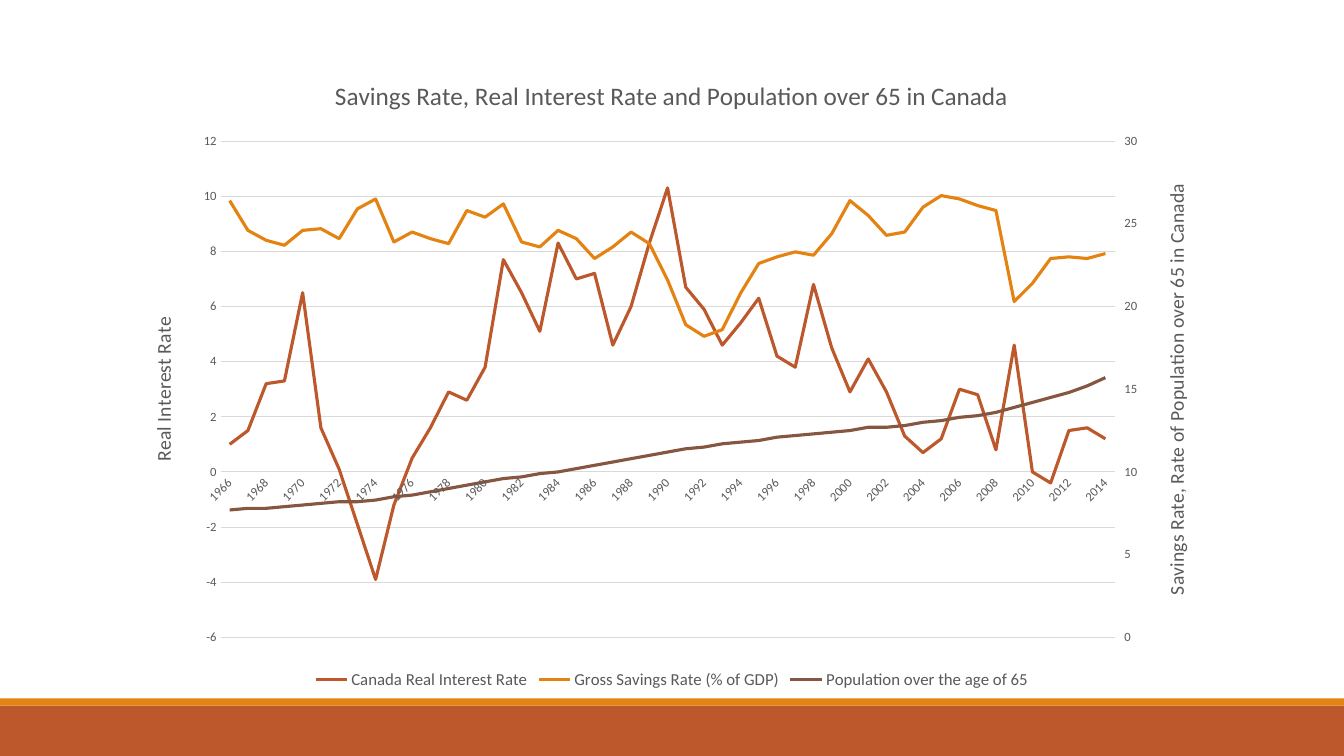
from copy import deepcopy

from lxml import etree
from pptx import Presentation
from pptx.chart import data as cd
from pptx.dml.color import RGBColor
from pptx.enum import chart as ec
from pptx.enum import shapes
from pptx.oxml import ns
from pptx.util import Pt

RUST = RGBColor(0xBD, 0x58, 0x2C)
AMBER = RGBColor(0xE4, 0x83, 0x12)
BROWN = RGBColor(0x86, 0x56, 0x40)
GRAY = RGBColor(0x59, 0x59, 0x59)
PALE = RGBColor(0xD9, 0xD9, 0xD9)
FACE = "Calibri"
AUTO = -1000  # degrees; lets the labels turn only when they are crowded

TITLE = "Savings Rate, Real Interest Rate and Population over 65 in Canada"
LEFT = "Real Interest Rate"
RIGHT = "Savings Rate, Rate of Population over 65 in Canada"
YEARS = range(1966, 2015)
SERIES = [
    ("Canada Real Interest Rate", RUST, [
        1, 1.5, 3.2, 3.3, 6.5, 1.6, 0.1, -1.9, -3.9, -1.2, 0.5, 1.6, 2.9,
        2.6, 3.8, 7.7, 6.5, 5.1, 8.3, 7, 7.2, 4.6, 6, 8.3, 10.3, 6.7, 5.9,
        4.6, 5.4, 6.3, 4.2, 3.8, 6.8, 4.5, 2.9, 4.1, 2.9, 1.3, 0.7, 1.2, 3,
        2.8, 0.8, 4.6, 0, -0.4, 1.5, 1.6, 1.2]),
    ("Gross Savings Rate (% of GDP)", AMBER, [
        26.4, 24.6, 24, 23.7, 24.6, 24.7, 24.1, 25.9, 26.5, 23.9, 24.5, 24.1,
        23.8, 25.8, 25.4, 26.2, 23.9, 23.6, 24.6, 24.1, 22.9, 23.6, 24.5,
        23.8, 21.6, 18.9, 18.2, 18.6, 20.8, 22.6, 23, 23.3, 23.1, 24.4, 26.4,
        25.5, 24.3, 24.5, 26, 26.7, 26.5, 26.1, 25.8, 20.3, 21.4, 22.9, 23,
        22.9, 23.2]),
    ("Population over the age of 65", BROWN, [
        7.7, 7.8, 7.8, 7.9, 8, 8.1, 8.2, 8.2, 8.3, 8.5, 8.6, 8.8, 9, 9.2, 9.4,
        9.6, 9.7, 9.9, 10, 10.2, 10.4, 10.6, 10.8, 11, 11.2, 11.4, 11.5, 11.7,
        11.8, 11.9, 12.1, 12.2, 12.3, 12.4, 12.5, 12.7, 12.7, 12.8, 13, 13.1,
        13.3, 13.4, 13.6, 13.9, 14.2, 14.5, 14.8, 15.2, 15.7]),
]


def style(font, size):
    for key, val in {"name": FACE, "size": Pt(size), "bold": False}.items():
        setattr(font, key, val)
    font.color.rgb = GRAY


def add_bar(slide, top, height, color):
    bar = slide.shapes.add_shape(
        shapes.MSO_SHAPE.RECTANGLE, 0, Pt(top), Pt(960), Pt(height))
    bar.shadow.inherit = False
    bar.fill.solid()
    bar.fill.fore_color.rgb = color
    bar.line.fill.background()


def add_title(item, words, size):
    """Give a chart or an axis a title."""
    frame = item.text_frame
    frame.text = words
    para = frame.paragraphs[0]
    for part in (para, para.runs[0]):
        style(part.font, size)


def turn(node, rot):
    """Rotate the text whose properties lie below node."""
    body = node.xpath(".//a:bodyPr")[0]
    body.set("rot", str(rot * 60000))
    body.set("vert", "horz")


def put(node, vals):
    """Set the val of each named child of node."""
    for tag, val in vals.items():
        node.xpath(f".//c:{tag}")[0].set("val", str(val))


def place(node, index, spots):
    """Give a chart part a manual layout, as child number index."""
    for old in node.xpath("c:layout"):
        node.remove(old)
    layout = etree.Element(ns.qn("c:layout"))
    manual = etree.SubElement(layout, ns.qn("c:manualLayout"))
    for tag, val in spots.items():
        etree.SubElement(manual, ns.qn(f"c:{tag}")).set("val", str(val))
    node.insert(index, layout)


def add_chart(slide):
    data = cd.CategoryChartData()
    data.categories = [str(year) for year in YEARS]
    for name, _, vals in SERIES:
        data.add_series(name, vals)
    chart = slide.shapes.add_chart(
        ec.XL_CHART_TYPE.LINE, Pt(91.5), Pt(45.4), Pt(776.9), Pt(450),
        data).chart
    style(chart.font, 10)
    add_title(chart.chart_title, TITLE, 18)
    chart.chart_title.include_in_layout = False
    chart.has_legend = True
    chart.legend.position = ec.XL_LEGEND_POSITION.BOTTOM
    chart.legend.include_in_layout = False
    style(chart.legend.font, 12)
    for line, (_, color, _) in zip(chart.plots[0].series, SERIES):
        line.smooth = False
        line.format.line.color.rgb = color
        line.format.line.width = Pt(2.25)
    return chart


def set_axes(chart):
    cat, val = chart.category_axis, chart.value_axis
    for axis in (cat, val):
        axis.major_tick_mark = axis.minor_tick_mark = ec.XL_TICK_MARK.NONE
        style(axis.tick_labels.font, 9)
    for line in (cat.format.line, val.major_gridlines.format.line):
        line.color.rgb = PALE
        line.width = Pt(0.75)
    val.format.line.fill.background()
    scale = {"minimum_scale": -6, "maximum_scale": 12, "major_unit": 2}
    for key, num in scale.items():
        setattr(val, key, num)
    val.tick_labels.number_format = "General"
    val.tick_labels.number_format_is_linked = False
    add_title(val.axis_title, LEFT, 14)
    for spot, rot in {"catAx/c:txPr": AUTO, "valAx/c:title": -90}.items():
        turn(chart.element.xpath(f".//c:{spot}")[0], rot)


def add_right(chart):
    """Move all series but the first to a second value axis."""
    root = chart.element
    plot, cat, val = (root.xpath(f".//c:{tag}")[0]
                      for tag in ("lineChart", "catAx", "valAx"))
    plot2, cat2, val2 = (deepcopy(node) for node in (plot, cat, val))
    for group, drop in ((plot, slice(1, None)), (plot2, slice(0, 1))):
        for ser in group.xpath("c:ser")[drop]:
            group.remove(ser)
    for node, num in zip(plot2.xpath("c:axId"), (5001, 5002)):
        node.set("val", str(num))
    put(cat2, {"axId": 5001, "crossAx": 5002, "delete": 1})
    put(val2, {"axId": 5002, "crossAx": 5001, "axPos": "r", "crosses": "max",
               "majorTickMark": "out", "min": 0, "max": 30, "majorUnit": 5})
    val2.remove(val2.xpath("c:majorGridlines")[0])
    val2.xpath(".//a:t")[0].text = RIGHT
    plot.addnext(plot2)
    val.addnext(val2)
    val2.addnext(cat2)


def place_parts(chart):
    edge = {"xMode": "edge", "yMode": "edge"}
    root = chart.element
    place(root.xpath(".//c:plotArea")[0], 0, {
        "layoutTarget": "inner", **edge,
        "x": 0.085, "y": 0.123, "w": 0.822, "h": 0.788})
    place(root.xpath("c:chart/c:title")[0], 1, {**edge, "x": 0.186, "y": 0.016})


def main():
    deck = Presentation()
    deck.slide_width, deck.slide_height = Pt(960), Pt(540)
    slide = deck.slides.add_slide(deck.slide_layouts[6])
    add_bar(slide, 504, 36, RUST)
    add_bar(slide, 498.8, 5.2, AMBER)
    chart = add_chart(slide)
    set_axes(chart)
    add_right(chart)
    place_parts(chart)
    deck.save("out.pptx")


if __name__ == "__main__":
    main()
